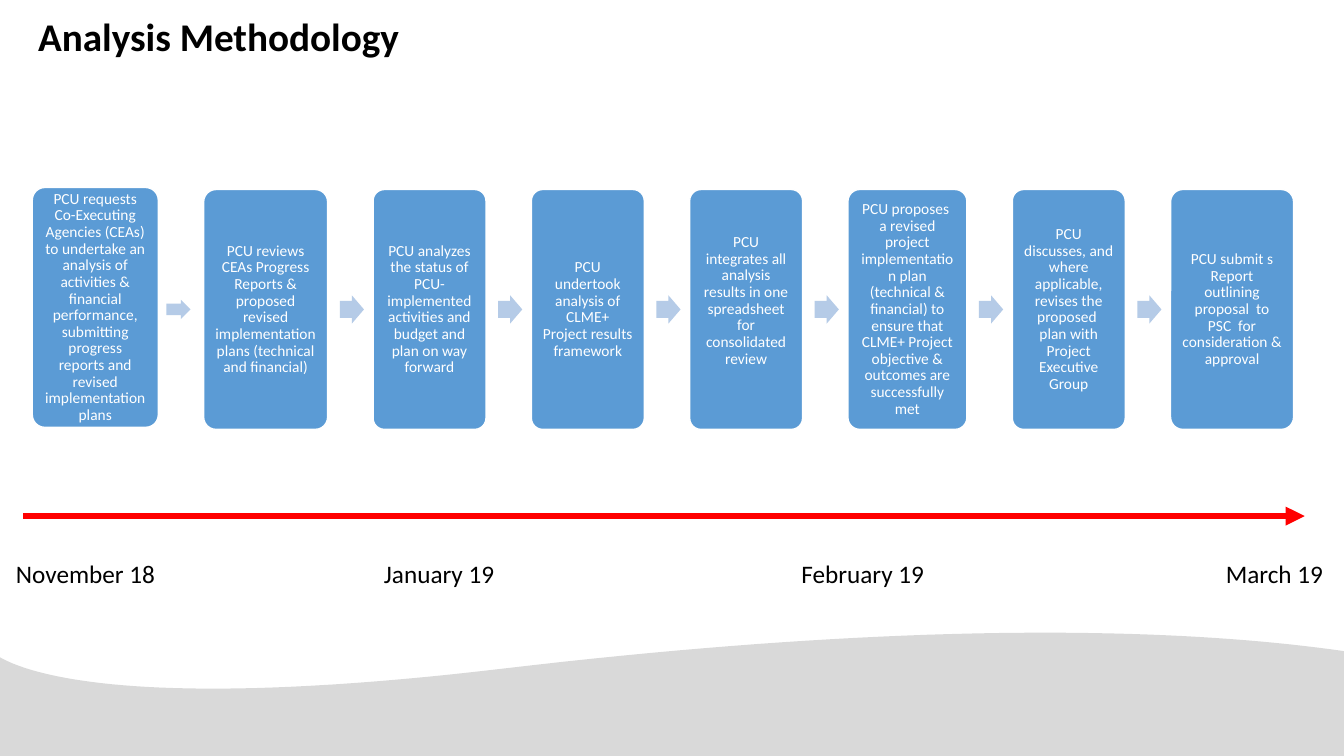
from dataclasses import dataclass

from lxml.etree import SubElement
from pptx import Presentation
from pptx.dml.color import RGBColor as RGB
from pptx.enum.shapes import MSO_CONNECTOR as CONN, MSO_SHAPE as SHAPE
from pptx.enum.text import MSO_ANCHOR as ANCHOR, MSO_AUTO_SIZE as AUTO, PP_ALIGN as ALIGN
from pptx.oxml.ns import qn
from pptx.util import Inches, Pt


@dataclass(frozen=True)
class Theme:
    font: str = "Calibri"
    title: int = 28
    date: int = 18
    step: int = 11
    ink: RGB = RGB(0, 0, 0)
    white: RGB = RGB(0xFF, 0xFF, 0xFF)
    box: RGB = RGB(0x5B, 0x9B, 0xD5)
    arrow: RGB = RGB(0xB5, 0xCB, 0xE7)
    timeline: RGB = RGB(0xFF, 0, 0)
    wave: RGB = RGB(0xD9, 0xD9, 0xD9)


T = Theme()

BOX_TOP, BOX_H, BOX_GAP = 1.88, 2.38, 0.45
ARROW_W, ARROW_H = 0.24, 0.28

# Box width, text, extra bottom inset
STEPS = [
    (1.25, "PCU requests Co-Executing Agencies (CEAs) to undertake an analysis of "
           "activities & financial performance, submitting progress reports and "
           "revised implementation plans", 0),
    (1.23, "PCU reviews CEAs Progress Reports & proposed revised implementation "
           "plans (technical and financial)", 0),
    (1.12, "PCU analyzes the status of PCU- implemented activities and budget and "
           "plan on way forward", 0),
    (1.12, "PCU undertook analysis of CLME+ Project results framework", 0),
    (1.12, "PCU integrates all analysis results in one spreadsheet for "
           "consolidated review", 0.17),
    (1.18, "PCU proposes  a revised project implementation plan (technical & "
           "financial) to ensure that CLME+ Project objective & outcomes are "
           "successfully met", 0),
    (1.12, "PCU discusses, and where applicable, revises the proposed  plan with "
           "Project Executive Group", 0),
    (1.22, "PCU submit s Report outlining proposal  to PSC  for consideration & "
           "approval", 0),
]

# Left, width, text
DATES = [
    (0.06, 1.69, "November 18"),
    (3.71, 1.69, "January 19"),
    (7.85, 1.87, "February 19"),
    (12.06, 1.27, "March 19"),
]


def set_font(p, size, color, bold=False):
    f = p.font
    f.name, f.size, f.bold = T.font, Pt(size), bold
    f.color.rgb = color


def add_text(s, x, y, w, h, text, size, bold=False):
    tf = s.shapes.add_textbox(Inches(x), Inches(y), Inches(w), Inches(h)).text_frame
    tf.word_wrap = True
    tf.auto_size = AUTO.SHAPE_TO_FIT_TEXT
    tf.text = text
    set_font(tf.paragraphs[0], size, T.ink, bold)


def add_filled(s, kind, x, y, w, h, color):
    sp = s.shapes.add_shape(kind, Inches(x), Inches(y), Inches(w), Inches(h))
    sp.shadow.inherit = False
    sp.fill.solid()
    sp.fill.fore_color.rgb = color
    sp.line.fill.background()
    return sp


def add_step(s, x, y, w, text, lift):
    sp = add_filled(s, SHAPE.ROUNDED_RECTANGLE, x, y, w, BOX_H, T.box)
    sp.adjustments[0] = 0.1
    sp.line.color.rgb = T.white
    sp.line.width = Pt(1)
    tf = sp.text_frame
    tf.word_wrap = True
    tf.vertical_anchor = ANCHOR.MIDDLE
    tf.margin_left = tf.margin_right = tf.margin_top = Inches(0.08)
    tf.margin_bottom = Inches(0.08 + lift)
    tf.text = text
    p = tf.paragraphs[0]
    p.alignment = ALIGN.CENTER
    p.line_spacing = 0.9
    set_font(p, T.step, T.white)


def add_step_arrow(s, x, y, h):
    sp = add_filled(s, SHAPE.RIGHT_ARROW, x, y, ARROW_W, h, T.arrow)
    sp.adjustments[0], sp.adjustments[1] = 0.6, 0.5


def add_timeline(s, x1, x2, y):
    line = s.shapes.add_connector(CONN.STRAIGHT, Inches(x1), Inches(y), Inches(x2), Inches(y))
    line.line.color.rgb = T.timeline
    line.line.width = Pt(4.5)
    SubElement(line.line._get_or_add_ln(), qn("a:tailEnd"), type="triangle")
    SubElement(line._element.spPr, qn("a:effectLst"))


def bezier(p0, p1, p2, p3, steps=40):
    """Points along a cubic curve, after its start."""
    for i in range(1, steps + 1):
        t = i / steps
        u = 1 - t
        yield tuple(u**3 * a + 3 * u * u * t * b + 3 * u * t * t * c + t**3 * d
                    for a, b, c, d in zip(p0, p1, p2, p3))


def add_wave(s):
    right, crest, left = (13.33, 6.46), (5.02, 6.63), (-0.02, 6.51)
    points = [right,
              *bezier(right, (11.65, 6.22), (9.02, 6.16), crest),
              *bezier(crest, (1.33, 7.07), (0.26, 6.68), left),
              (-0.02, 7.5)]
    fb = s.shapes.build_freeform(Inches(13.33), Inches(7.5))
    fb.add_line_segments([(Inches(x), Inches(y)) for x, y in points], close=True)
    sp = fb.convert_to_shape()
    sp.shadow.inherit = False
    sp.fill.solid()
    sp.fill.fore_color.rgb = T.wave
    sp.line.fill.background()


def add_process(s):
    x = 0.32
    for i, (w, text, lift) in enumerate(STEPS):
        first = i == 0
        add_step(s, x, BOX_TOP - 0.02 * first, w, text, lift)
        x += w
        if i < len(STEPS) - 1:
            # The first arrow is flatter and sits closer to its box
            h = 0.19 if first else ARROW_H
            add_step_arrow(s, x + (0.08 if first else 0.12), BOX_TOP + (BOX_H - h) / 2, h)
        x += BOX_GAP


def main():
    prs = Presentation()
    prs.slide_width, prs.slide_height = Inches(13.33), Inches(7.5)
    s = prs.slides.add_slide(prs.slide_layouts[6])

    # Background and title
    add_wave(s)
    add_text(s, 0.28, 0.07, 5.62, 0.57, "Analysis Methodology", T.title, bold=True)

    # Timeline with dates
    add_timeline(s, 0.23, 12.94, 5.12)
    for x, w, text in DATES:
        add_text(s, x, 5.49, w, 0.4, text, T.date)

    # Process steps
    add_process(s)

    prs.save("out.pptx")


if __name__ == "__main__":
    main()
